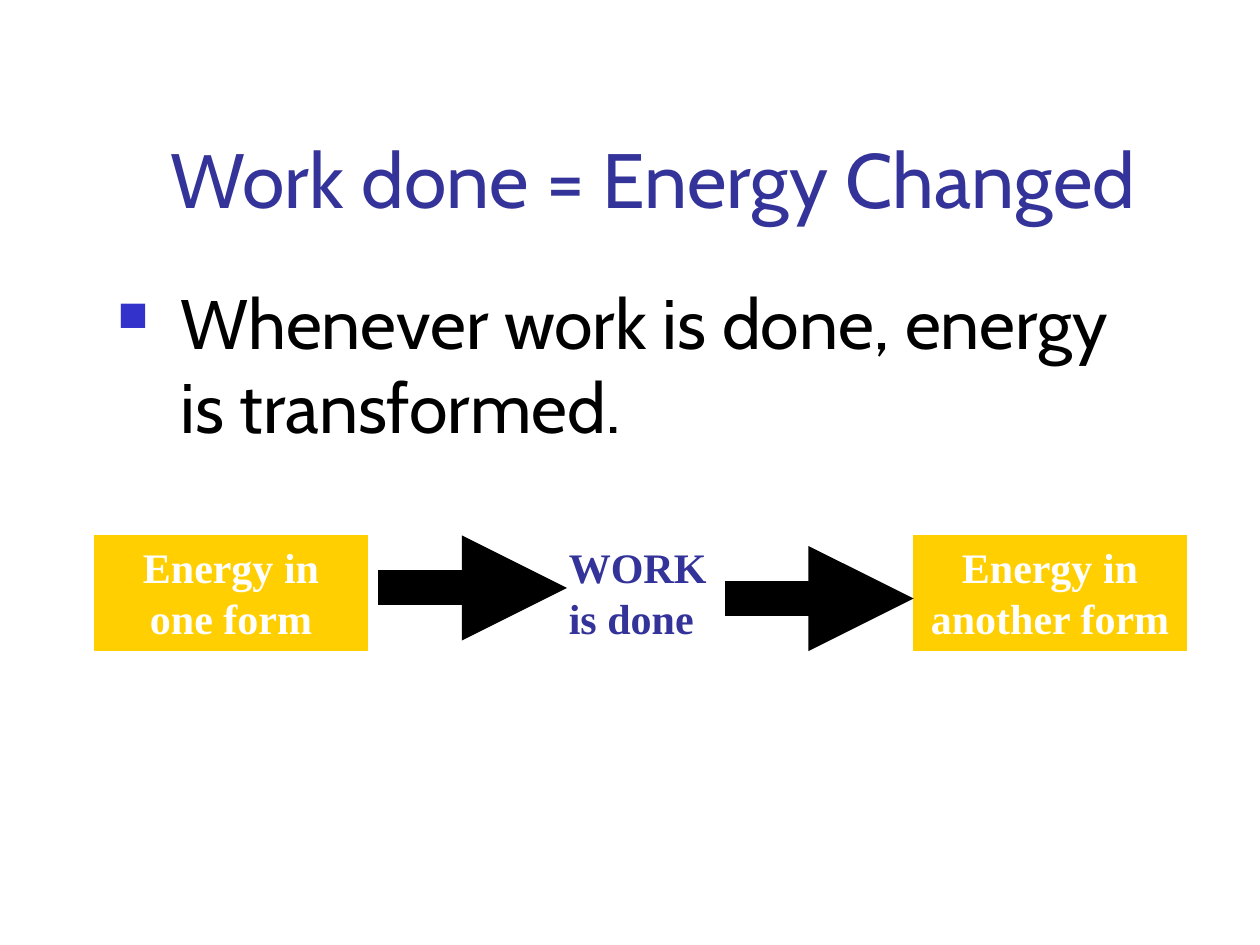
from lxml.etree import SubElement
from pptx import Presentation
from pptx.dml.color import RGBColor
from pptx.enum.shapes import MSO_CONNECTOR as Connector, MSO_SHAPE as Shape
from pptx.enum.text import MSO_ANCHOR as Anchor, PP_ALIGN as Align
from pptx.oxml.ns import qn
from pptx.util import Pt

NAVY, BLUE, GOLD, BLACK, WHITE = "333399", "3333CC", "FFCF01", "000000", "FFFFFF"
HEADING = {"name": "Cabin", "size": Pt(44)}
BODY = {"name": "Cabin", "size": Pt(40)}
LABEL = {"name": "Times New Roman", "size": Pt(24), "bold": True}


def rgb(value):
    return RGBColor.from_string(value)


def write_text(shape, text, font, color, align=Align.LEFT, anchor=Anchor.TOP):
    frame = shape.text_frame
    frame.word_wrap = True
    frame.vertical_anchor = anchor
    paragraph = frame.paragraphs[0]
    paragraph.alignment = align
    run = paragraph.add_run()
    run.text = text
    for name, value in font.items():
        setattr(run.font, name, value)
    run.font.color.rgb = rgb(color)
    return paragraph


def add_text(slide, box, text, font, color, **layout):
    shape = slide.shapes.add_textbox(*map(Pt, box))
    return write_text(shape, text, font, color, **layout)


def add_bullet(paragraph, character, color, percent, indent):
    properties = paragraph._p.get_or_add_pPr()
    properties.set("marL", str(Pt(indent)))
    properties.set("indent", str(Pt(-indent)))
    bullet_color = SubElement(properties, qn("a:buClr"))
    SubElement(bullet_color, qn("a:srgbClr"), val=color)
    SubElement(properties, qn("a:buSzPct"), val=str(percent * 1000))
    SubElement(properties, qn("a:buChar"), char=character)


def add_energy_box(slide, box, text):
    shape = slide.shapes.add_shape(Shape.RECTANGLE, *map(Pt, box))
    shape.shadow.inherit = False
    shape.fill.solid()
    shape.fill.fore_color.rgb = rgb(GOLD)
    shape.line.color.rgb = rgb(GOLD)
    shape.line.width = Pt(0.75)
    write_text(shape, text, LABEL, WHITE, align=Align.CENTER)


def add_arrow(slide, left, top, length):
    arrow = slide.shapes.add_connector(
        Connector.STRAIGHT, Pt(left), Pt(top), Pt(left + length), Pt(top))
    arrow.line.color.rgb = rgb(BLACK)
    arrow.line.width = Pt(20)
    SubElement(arrow.line._get_or_add_ln(), qn("a:tailEnd"), type="triangle")
    SubElement(arrow._element.spPr, qn("a:effectLst"))


def add_heading(slide, box):
    add_text(slide, box, "Work done = Energy Changed", HEADING, NAVY,
             anchor=Anchor.BOTTOM)


def add_statement(slide, box):
    paragraph = add_text(slide, box, "Whenever work is done, energy is transformed.",
                         BODY, BLACK)
    add_bullet(paragraph, "■", BLUE, percent=60, indent=36)


def add_energy_flow(slide, box):
    left, top, width, height = box
    box_width, arrow_length = 156, 108
    right_box = left + width - box_width

    # Energy before and after
    add_energy_box(slide, (left, top, box_width, height), "Energy in one form")
    add_energy_box(slide, (right_box, top, box_width, height), "Energy in another form")

    # Work between the two arrows
    add_arrow(slide, left + box_width + 6, top + 30, arrow_length)
    add_text(slide, (left + 264, top, 102, height), "WORK is done", LABEL, NAVY)
    add_arrow(slide, right_box - arrow_length, top + 36, arrow_length)


def main():
    presentation = Presentation()
    presentation.slide_width, presentation.slide_height = Pt(720), Pt(540)
    slide = presentation.slides.add_slide(presentation.slide_layouts[6])
    slide.background.fill.solid()
    slide.background.fill.fore_color.rgb = rgb(WHITE)

    add_heading(slide, (90.5, 16.5, 613.5, 115))
    add_statement(slide, (60, 156, 612, 108))
    add_energy_flow(slide, (54, 306, 624, 65.5))
    presentation.save("out.pptx")


if __name__ == "__main__":
    main()
